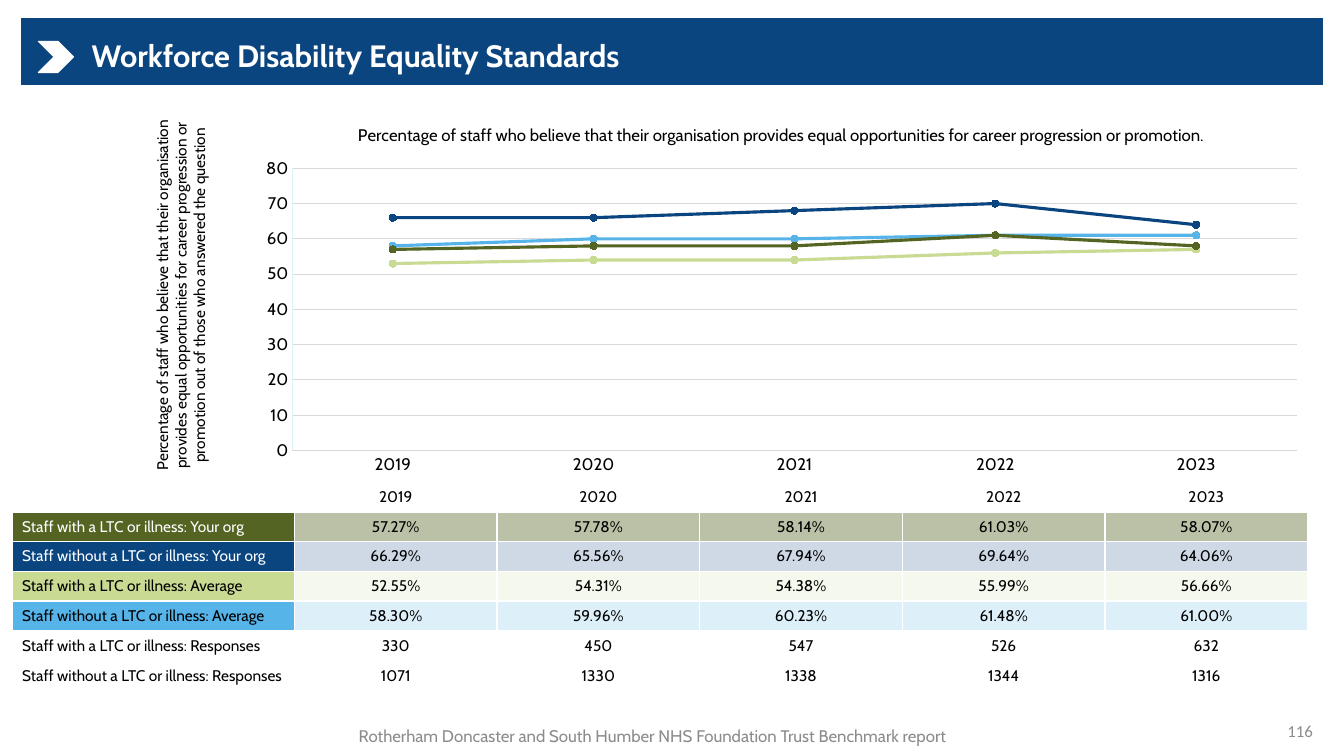
from dataclasses import dataclass
from typing import Any, Optional

import pptx
import pptx.chart.data
import pptx.dml.color
import pptx.enum.chart
import pptx.enum.shapes
import pptx.enum.text
import pptx.oxml
import pptx.oxml.ns
import pptx.util

RGBColor = pptx.dml.color.RGBColor
Align = pptx.enum.text.PP_ALIGN
Anchor = pptx.enum.text.MSO_ANCHOR
Shape = pptx.enum.shapes.MSO_SHAPE

PX = 9144  # EMU per px, 100 px to the inch
WHITE = RGBColor(0xFF, 0xFF, 0xFF)
BLACK = RGBColor(0x00, 0x00, 0x00)
GREY = RGBColor(0x8C, 0x8C, 0x8C)
GRID = RGBColor(0xD9, 0xD9, 0xD9)
AXIS = RGBColor(0xDB, 0xEF, 0xF9)
NAVY = RGBColor(0x0B, 0x45, 0x7F)
OLIVE = RGBColor(0x54, 0x64, 0x22)
LIME = RGBColor(0xC9, 0xDA, 0x92)
SKY = RGBColor(0x56, 0xB4, 0xE9)

YEARS = ["2019", "2020", "2021", "2022", "2023"]
LABEL_WIDTH, YEAR_WIDTH = 280, 201


@dataclass(frozen=True)
class Box:
    left: int
    top: int
    width: int
    height: int

    def emu(self) -> list[int]:
        return [side * PX for side in (self.left, self.top, self.width, self.height)]


@dataclass(frozen=True)
class Measure:
    """A table row; one with a colour is also a line of the chart."""
    label: str
    values: list[float]
    color: Optional[RGBColor] = None
    tint: int = 0
    label_color: RGBColor = BLACK

    def texts(self) -> list[str]:
        return [f"{value:.2f}%" if self.color else str(value) for value in self.values]


@dataclass(frozen=True)
class Caption:
    text: str
    box: Box
    align: Any
    size: int
    color: RGBColor
    name: str = "Cabin"
    rotation: int = 0
    anchor: Any = Anchor.MIDDLE


CHART_BOX = Box(242, 107, 1065, 371)
YOUR_ORG = [
    Measure("Staff with a LTC or illness: Your org",
            [57.27, 57.78, 58.14, 61.03, 58.07], OLIVE, 40, WHITE),
    Measure("Staff without a LTC or illness: Your org",
            [66.29, 65.56, 67.94, 69.64, 64.06], NAVY, 20, WHITE),
]
AVERAGE = [
    Measure("Staff with a LTC or illness: Average",
            [52.55, 54.31, 54.38, 55.99, 56.66], LIME, 17),
    Measure("Staff without a LTC or illness: Average",
            [58.30, 59.96, 60.23, 61.48, 61.00], SKY, 20),
]
RESPONSES = [
    Measure("Staff with a LTC or illness: Responses", [330, 450, 547, 526, 632]),
    Measure("Staff without a LTC or illness: Responses", [1071, 1330, 1338, 1344, 1316]),
]
CAPTIONS = [
    Caption("Percentage of staff who believe that their organisation provides equal "
            "opportunities for career progression or promotion out of those who "
            "answered the question",
            Box(-6, 260, 371, 66), Align.CENTER, 11, BLACK, rotation=270, anchor=Anchor.TOP),
    Caption("116", Box(1012, 705, 300, 40), Align.RIGHT, 12, GREY, "Calibri"),
    Caption("Rotherham Doncaster and South Humber NHS Foundation Trust Benchmark report",
            Box(295, 710, 705, 39), Align.CENTER, 12, GREY),
]


def set_font(font: Any, size: int, color: RGBColor, name: str = "Cabin", bold: bool = False) -> None:
    formats = {"size": pptx.util.Pt(size), "name": name, "bold": bold}
    for attribute, value in formats.items():
        setattr(font, attribute, value)
    font.color.rgb = color


def set_line(line: Any, color: RGBColor, width: float) -> None:
    line.color.rgb = color
    line.width = pptx.util.Pt(width)


def set_manual_layout(parent: Any, successor: str, target: str = "", **lengths: int) -> None:
    """Place a chart title or plot area by px from the corner of the chart."""
    for old in parent.findall(pptx.oxml.ns.qn("c:layout")):
        parent.remove(old)
    sides = {"x": CHART_BOX.width, "y": CHART_BOX.height,
             "w": CHART_BOX.width, "h": CHART_BOX.height}
    values = "".join(f'<c:{key} val="{length / sides[key]}"/>' for key, length in lengths.items())
    layout = pptx.oxml.parse_xml(
        f'<c:layout {pptx.oxml.ns.nsdecls("c")}><c:manualLayout>{target}'
        f'<c:xMode val="edge"/><c:yMode val="edge"/>{values}</c:manualLayout></c:layout>')
    parent.find(pptx.oxml.ns.qn(successor)).addprevious(layout)


def add_header(slide: Any) -> None:
    for kind, box, color in ((Shape.RECTANGLE, Box(21, 18, 1291, 66), NAVY),
                             (Shape.CHEVRON, Box(38, 41, 35, 31), WHITE)):
        shape = slide.shapes.add_shape(kind, *box.emu())
        shape.shadow.inherit = False
        shape.fill.solid()
        shape.fill.fore_color.rgb = color
        set_line(shape.line, color, 0.75)
    title = slide.shapes.title
    title.element.getparent().append(title.element)  # in front of the bar
    sides = zip(("left", "top", "width", "height"), Box(81, 35, 961, 44).emu())
    for side, value in sides:
        setattr(title, side, value)
    frame = title.text_frame
    frame.text = "Workforce Disability Equality Standards"
    frame.auto_size = pptx.enum.text.MSO_AUTO_SIZE.NONE
    frame.vertical_anchor = Anchor.MIDDLE
    paragraph = frame.paragraphs[0]
    paragraph.alignment = Align.LEFT
    paragraph.line_spacing = 0.9
    set_font(paragraph.runs[0].font, 22, WHITE, bold=True)


def add_caption(slide: Any, caption: Caption) -> None:
    shape = slide.shapes.add_textbox(*caption.box.emu())
    shape.rotation = caption.rotation
    frame = shape.text_frame
    frame.word_wrap = True
    frame.vertical_anchor = caption.anchor
    frame.text = caption.text
    frame.paragraphs[0].alignment = caption.align
    set_font(frame.paragraphs[0].runs[0].font, caption.size, caption.color, caption.name)


def add_trend_chart(slide: Any, measures: list[Measure]) -> None:
    data = pptx.chart.data.CategoryChartData()
    data.categories = YEARS
    for measure in measures:
        data.add_series(measure.label, [round(value) for value in measure.values])
    chart = slide.shapes.add_chart(pptx.enum.chart.XL_CHART_TYPE.LINE_MARKERS,
                                   *CHART_BOX.emu(), data).chart
    set_font(chart.font, 10, BLACK)
    chart.has_legend = False
    title = chart.chart_title.text_frame
    title.text = ("Percentage of staff who believe that their organisation provides equal "
                  "opportunities for career progression or promotion.")
    set_font(title.paragraphs[0].runs[0].font, 12, BLACK)
    set_manual_layout(chart.chart_title._element, "c:overlay", x=110, y=13)
    set_manual_layout(chart._chartSpace.chart.plotArea, "c:lineChart",
                      '<c:layoutTarget val="inner"/>', x=48, y=60, w=996, h=280)
    for axis, color, width in ((chart.category_axis, GRID, 0.75), (chart.value_axis, AXIS, 0.25)):
        axis.major_tick_mark = axis.minor_tick_mark = pptx.enum.chart.XL_TICK_MARK.NONE
        set_font(axis.tick_labels.font, 12, BLACK)
        set_line(axis.format.line, color, width)
    scale = {"minimum_scale": 0, "maximum_scale": 80, "major_unit": 10}
    for attribute, value in scale.items():
        setattr(chart.value_axis, attribute, value)
    set_line(chart.value_axis.major_gridlines.format.line, GRID, 0.75)
    chart.plots[0].vary_by_categories = False
    for series, measure in zip(chart.plots[0].series, measures):
        series.smooth = False
        set_line(series.format.line, measure.color, 2.25)
        marker = series.marker
        marker.style = pptx.enum.chart.XL_MARKER_STYLE.CIRCLE
        marker.size = 5
        marker.format.fill.solid()
        marker.format.fill.fore_color.rgb = measure.color
        set_line(marker.format.line, measure.color, 0.75)


def format_cell(cell: Any, text: str, align: Any, color: RGBColor,
                fill: Optional[RGBColor], alpha: int, bottom: int) -> None:
    cell.text = text
    cell.vertical_anchor = Anchor.MIDDLE
    paragraph = cell.text_frame.paragraphs[0]
    paragraph.alignment = align
    for item in (paragraph, *paragraph.runs):
        set_font(item.font, 11, color)
    properties = cell._tc.get_or_add_tcPr()
    for side, points in (("L", 1), ("R", 1), ("T", 1), ("B", bottom)):
        properties.append(pptx.oxml.parse_xml(
            f'<a:ln{side} {pptx.oxml.ns.nsdecls("a")} w="{pptx.util.Pt(points)}">'
            f'<a:solidFill><a:srgbClr val="{WHITE}"/></a:solidFill></a:ln{side}>'))
    if fill is None:
        cell.fill.background()
        return
    cell.fill.solid()
    cell.fill.fore_color.rgb = fill
    if alpha < 100:
        properties.find(pptx.oxml.ns.qn("a:solidFill"))[0].append(pptx.oxml.parse_xml(
            f'<a:alpha {pptx.oxml.ns.nsdecls("a")} val="{alpha * 1000}"/>'))


def add_results_table(slide: Any, measures: list[Measure]) -> None:
    rows = [Measure("", []), *measures]
    box = Box(12, 478, LABEL_WIDTH + YEAR_WIDTH * len(YEARS), 207)
    table = slide.shapes.add_table(len(rows), len(YEARS) + 1, *box.emu()).table
    table.first_row = table.horz_banding = False
    for index, column in enumerate(table.columns):
        column.width = (YEAR_WIDTH if index else LABEL_WIDTH) * PX
    for row_index, measure in enumerate(rows):
        bottom = 1 if row_index else 3
        format_cell(table.cell(row_index, 0), measure.label, Align.LEFT,
                    measure.label_color, measure.color, 100, bottom)
        for index, text in enumerate(measure.texts() or YEARS, start=1):
            format_cell(table.cell(row_index, index), text, Align.CENTER,
                        BLACK, measure.color, measure.tint, bottom)


def main() -> None:
    presentation = pptx.Presentation()
    presentation.slide_width, presentation.slide_height = 1333 * PX, 750 * PX
    slide = presentation.slides.add_slide(presentation.slide_layouts.get_by_name("Title Only"))
    add_header(slide)
    add_trend_chart(slide, AVERAGE + YOUR_ORG)
    add_results_table(slide, YOUR_ORG + AVERAGE + RESPONSES)
    for caption in CAPTIONS:
        add_caption(slide, caption)
    presentation.save("out.pptx")


if __name__ == "__main__":
    main()
